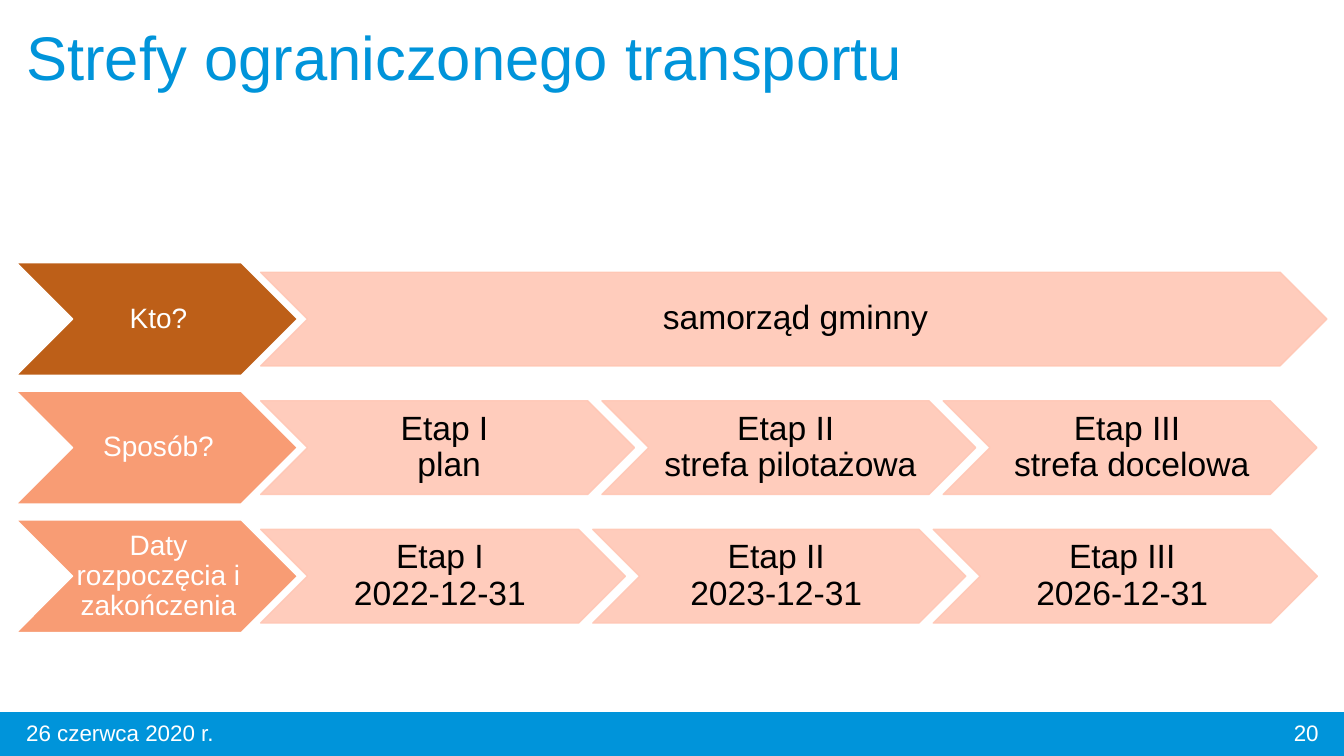
from lxml.etree import SubElement
from pptx import Presentation
from pptx.dml.color import RGBColor
from pptx.enum.shapes import MSO_SHAPE
from pptx.enum.text import MSO_ANCHOR, PP_ALIGN
from pptx.oxml.ns import qn
from pptx.util import Cm, Pt

WIDTH, HEIGHT = 33.87, 19.05
BLUE, WHITE, BLACK = "0094DA", "FFFFFF", "000000"
BROWN, ORANGE, PEACH = "BD5F18", "F89C74", "FFC7B5"

LEFT, TOP, PITCH = 0.41, 6.62, 3.24
LABEL_W, LABEL_H = 7.09, 2.84
STEP_LEFT, STEP_H, OVERLAP = 6.57, 2.36, 0.82
BAR_TOP = 17.96

# label, its colour, then (text, width) of each step
ROWS = [
    ("Kto?", BROWN, [("samorząd gminny", 26.87)]),
    ("Sposób?", ORANGE, [
        ("Etap I \vplan", 9.42),
        ("Etap II \vstrefa pilotażowa", 9.42),
        ("Etap III \vstrefa docelowa", 9.42),
    ]),
    ("Daty rozpoczęcia i zakończenia", ORANGE, [
        ("Etap I \v2022-12-31 ", 9.19),
        ("Etap II \v2023-12-31 ", 9.4),
        ("Etap III \v2026-12-31 ", 9.68),
    ]),
]


def paint(target, color, alpha=100):
    """Give a fill a solid colour, with alpha in percent."""
    target.solid()
    target.fore_color.rgb = RGBColor.from_string(color)
    if alpha < 100:
        tone = target._xPr.find(qn("a:solidFill"))[0]
        SubElement(tone, qn("a:alpha")).set("val", str(alpha * 1000))


class Board:
    def __init__(self, slide, font="Arial"):
        self.slide = slide
        self.font = font

    def label(self, shape, text, size, color, align, anchor, spacing=None):
        """Set and format the text of a shape."""
        frame = shape.text_frame
        frame.word_wrap = True
        frame.vertical_anchor = anchor
        frame.text = text
        for para in frame.paragraphs:
            para.alignment = align
            para.line_spacing = spacing
            for run in para.runs:
                run.font.name = self.font
                run.font.size = Pt(size)
                paint(run.font.fill, color)

    def title(self, text, *box):
        shape = self.slide.shapes.title
        shape.left, shape.top, shape.width, shape.height = map(Cm, box)
        self.label(shape, text, 44, BLUE, PP_ALIGN.LEFT, MSO_ANCHOR.TOP, 0.9)

    def shape(self, kind, box, fill, line, alpha=100):
        shape = self.slide.shapes.add_shape(kind, *map(Cm, box))
        shape.shadow.inherit = False
        paint(shape.fill, fill, alpha)
        paint(shape.line.fill, line, alpha)
        shape.line.width = Pt(1)
        return shape

    def arrow(self, text, box, fill, line, size, color, alpha=100):
        shape = self.shape(MSO_SHAPE.CHEVRON, box, fill, line, alpha)
        frame = shape.text_frame
        frame.margin_left, frame.margin_right = Cm(0.08), 0
        frame.margin_top = frame.margin_bottom = Cm(0.04)
        self.label(shape, text, size, color, PP_ALIGN.CENTER,
                   MSO_ANCHOR.MIDDLE, 0.9)

    def note(self, text, left, width, align):
        box = self.slide.shapes.add_textbox(
            *map(Cm, (left, BAR_TOP, width, 1.02)))
        self.label(box, text, 16, WHITE, align, MSO_ANCHOR.MIDDLE)

    def row(self, top, label, color, steps):
        self.arrow(label, (LEFT, top, LABEL_W, LABEL_H), color, WHITE,
                   20, WHITE)
        left = STEP_LEFT
        inset = (LABEL_H - STEP_H) / 2
        for text, width in steps:
            self.arrow(text, (left, top + inset, width, STEP_H),
                       PEACH, PEACH, 24, BLACK, 90)
            left += width - OVERLAP


def main():
    deck = Presentation()
    deck.slide_width, deck.slide_height = Cm(WIDTH), Cm(HEIGHT)
    board = Board(deck.slides.add_slide(deck.slide_layouts[5]))
    board.shape(MSO_SHAPE.RECTANGLE,
                (0, BAR_TOP, WIDTH, HEIGHT - BAR_TOP), BLUE, BLUE)
    board.title("Strefy ograniczonego transportu", LEFT, 0.56, 26.16, 2.16)
    for index, (label, color, steps) in enumerate(ROWS):
        board.row(TOP + index * PITCH, label, color, steps)
    board.note("26 czerwca 2020 r.", LEFT, 10.16, PP_ALIGN.LEFT)
    board.note("20", 25.86, 7.62, PP_ALIGN.RIGHT)
    deck.save("out.pptx")


if __name__ == "__main__":
    main()
